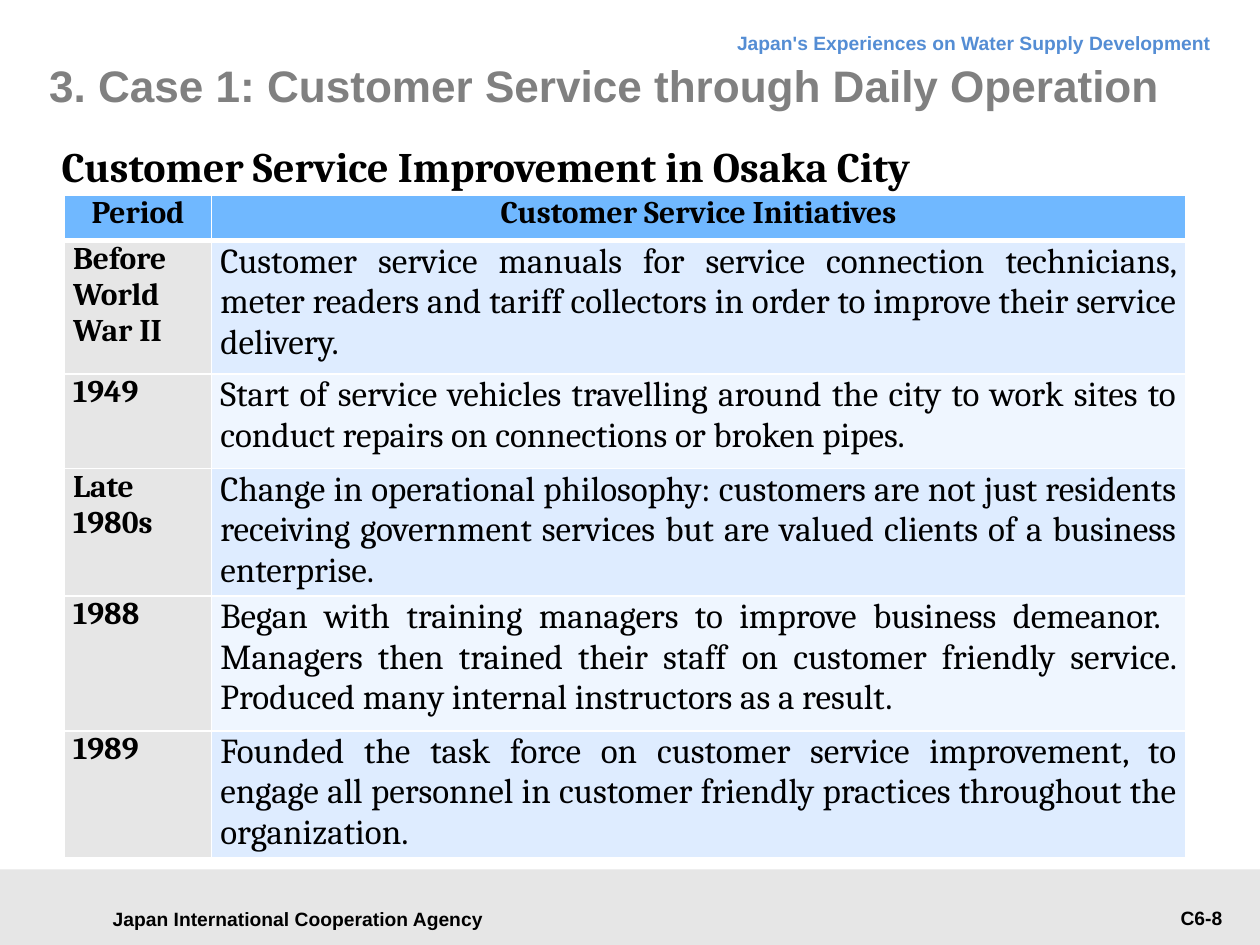
from lxml import etree
from pptx import Presentation
from pptx import util as u
from pptx.dml.color import RGBColor
from pptx.enum import shapes, text
from pptx.oxml.ns import qn

ALIGN = text.PP_ALIGN
ANCHOR = text.MSO_ANCHOR


def color(hex_value):
    return RGBColor.from_string(hex_value)


class SlideBuilder:
    heading_font = "Arial"
    body_font = "Cambria"
    black = "000000"
    white = "FFFFFF"
    grey = "E6E6E6"
    header_fill = "70B8FF"
    bands = ("DEECFF", "EFF6FF")

    def __init__(self, s):
        self.s = s

    def format(self, p, font, size, hex_value, bold, align):
        p.alignment = align
        for r in p.runs:
            r.font.name = font
            r.font.size = u.Pt(size)
            r.font.bold = bold
            r.font.color.rgb = color(hex_value)

    def band(self, left, top, width, height):
        sp = self.s.shapes.add_shape(
            shapes.MSO_SHAPE.RECTANGLE,
            *map(u.Inches, (left, top, width, height)))
        sp.shadow.inherit = False
        sp.fill.solid()
        sp.fill.fore_color.rgb = color(self.grey)
        sp.line.fill.background()

    def text(self, box, words, size, hex_value=black, font=heading_font,
             align=ALIGN.LEFT, anchor=ANCHOR.TOP, line=None,
             insets=(0.1, 0.05, 0.1, 0.05)):
        sp = self.s.shapes.add_textbox(*map(u.Inches, box))
        tf = sp.text_frame
        tf.word_wrap = True
        tf.vertical_anchor = anchor
        (tf.margin_left, tf.margin_top,
         tf.margin_right, tf.margin_bottom) = map(u.Inches, insets)
        tf.text = words
        p = tf.paragraphs[0]
        if line:
            p.line_spacing = u.Pt(line)
        self.format(p, font, size, hex_value, True, align)

    def borders(self, cell, **widths):
        # Border elements must come before the fill in the cell properties
        tc_pr = cell._tc.get_or_add_tcPr()
        for i, side in enumerate("LRTB"):
            ln = etree.Element(qn(f"a:ln{side}"),
                               w=str(u.Pt(widths.get(side, 1))))
            fill = etree.SubElement(ln, qn("a:solidFill"))
            etree.SubElement(fill, qn("a:srgbClr"), val=self.white)
            tc_pr.insert(i, ln)

    def cell(self, cell, words, fill, size, bold, align, top=0):
        cell.fill.solid()
        cell.fill.fore_color.rgb = color(fill)
        cell.margin_left = cell.margin_right = u.Inches(0.07)
        cell.margin_top = u.Inches(top)
        cell.margin_bottom = 0
        cell.text = words
        self.format(cell.text_frame.paragraphs[0], self.body_font, size,
                    self.black, bold, align)

    def table(self, left, top, widths, heights, header, rows):
        table = self.s.shapes.add_table(
            len(heights), len(widths), u.Inches(left), u.Inches(top),
            u.Inches(sum(widths)), u.Inches(sum(heights))).table
        for column, width in zip(table.columns, widths):
            column.width = u.Inches(width)
        for row, height in zip(table.rows, heights):
            row.height = u.Inches(height)

        for c, words in enumerate(header):
            cell = table.cell(0, c)
            self.cell(cell, words, self.header_fill, 18, True, ALIGN.CENTER)
            self.borders(cell, B=3)

        for n, (period, initiative) in enumerate(rows, start=1):
            label, detail = table.cell(n, 0), table.cell(n, 1)
            self.cell(label, period, self.grey, 18, True, ALIGN.JUSTIFY)
            self.cell(detail, initiative, self.bands[(n - 1) % 2], 20, False,
                      ALIGN.JUSTIFY, top=0.01)
            for cell in (label, detail):
                self.borders(cell, T=3 if n == 1 else 1)


INITIATIVES = [
    ("Before World War II",
     "Customer service manuals for service connection technicians, meter "
     "readers and tariff collectors in order to improve their service "
     "delivery."),
    ("1949",
     "Start of service vehicles travelling around the city to work sites to "
     "conduct repairs on connections or broken pipes."),
    ("Late 1980s",
     "Change in operational philosophy: customers are not just residents "
     "receiving government services but are valued clients of a business "
     "enterprise."),
    ("1988",
     "Began with training managers to improve business demeanor.  Managers "
     "then trained their staff on customer friendly service. Produced many "
     "internal instructors as a result."),
    ("1989",
     "Founded the task force on customer service improvement, to engage all "
     "personnel in customer friendly practices throughout the organization."),
]


def main():
    prs = Presentation()
    prs.slide_width, prs.slide_height = u.Inches(10), u.Inches(7.5)
    slide = SlideBuilder(prs.slides.add_slide(prs.slide_layouts[6]))

    # Footer
    slide.band(0, 6.9, 10, 0.6)
    slide.text((0.71, 7.12, 3.31, 0.34),
               "Japan International Cooperation Agency", 11,
               align=ALIGN.CENTER, anchor=ANCHOR.MIDDLE)
    slide.text((8.23, 7.14, 1.57, 0.29), "C6-8", 11, align=ALIGN.RIGHT)

    # Headings
    slide.text((2.72, 0.13, 6.99, 0.38),
               "Japan's Experiences on Water Supply Development", 11,
               "548DD4", align=ALIGN.RIGHT, line=18)
    slide.text((0.39, 1.07, 8.98, 0.55),
               "Customer Service Improvement in Osaka City", 24,
               font=slide.body_font, line=32, insets=(0.1, 0, 0, 0))
    slide.text((0.39, 0.28, 8.98, 0.79),
               "3. Case 1: Customer Service through Daily Operation", 25.2,
               "808080", anchor=ANCHOR.MIDDLE, insets=(0, 0, 0, 0))

    # Timeline of initiatives
    slide.table(0.51, 1.55, (1.17, 7.73),
                (0.36, 1.06, 0.75, 0.92, 1.07, 0.96),
                ("Period", "Customer Service Initiatives"), INITIATIVES)

    prs.save("out.pptx")


if __name__ == "__main__":
    main()
